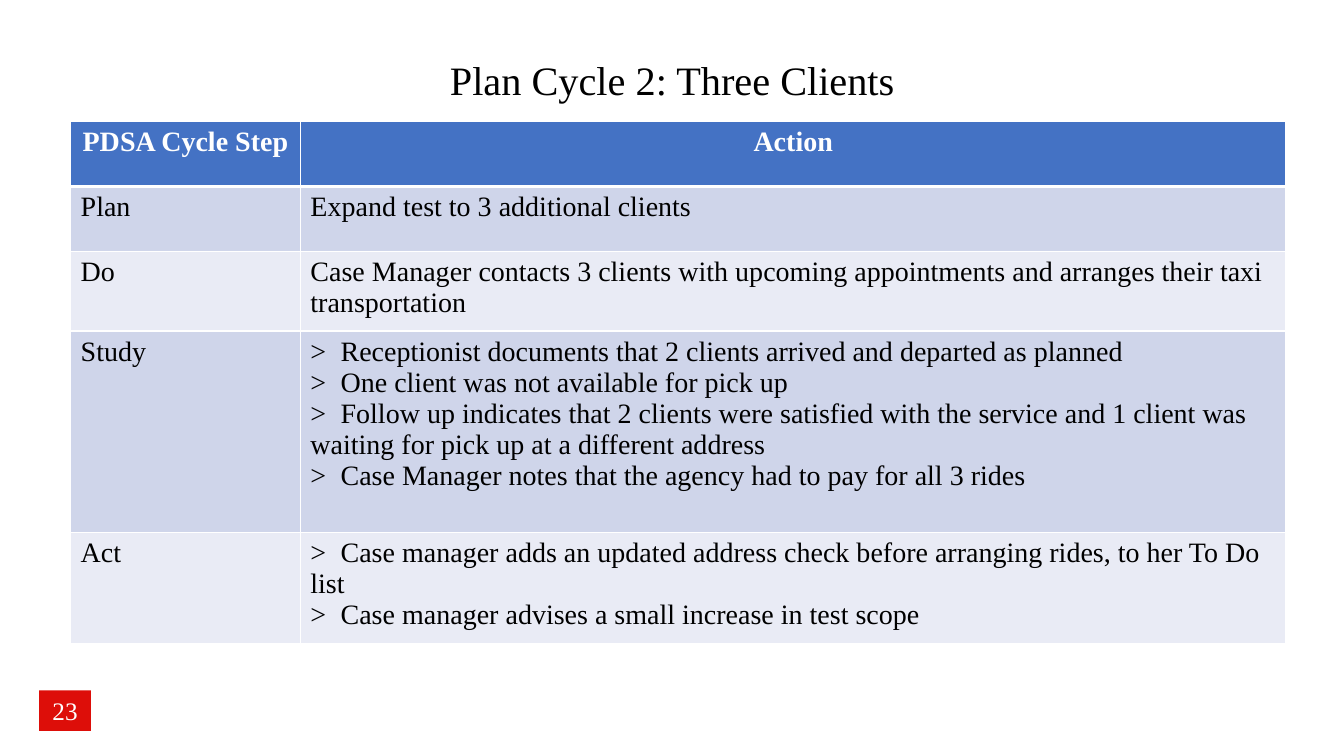
from dataclasses import dataclass

from lxml.etree import SubElement
from pptx import Presentation
from pptx.dml.color import RGBColor as Rgb
from pptx.enum.shapes import MSO_SHAPE as Shape
from pptx.enum.text import MSO_ANCHOR as Anchor, PP_ALIGN as Align
from pptx.oxml.ns import qn
from pptx.util import Cm, Pt


@dataclass(frozen=True)
class Theme:
    font: str = "Times New Roman"
    black: Rgb = Rgb(0x00, 0x00, 0x00)
    white: Rgb = Rgb(0xFF, 0xFF, 0xFF)
    header: Rgb = Rgb(0x44, 0x72, 0xC4)
    bands: tuple = (Rgb(0xCF, 0xD5, 0xEA), Rgb(0xE9, 0xEB, 0xF5))
    badge: Rgb = Rgb(0xDD, 0x0E, 0x09)
    title_size: float = 28.8
    table_size: float = 20
    badge_size: float = 18


THEME = Theme()
COLUMN_WIDTHS = (5.79, 24.84)
ROW_HEIGHTS = (1.63, 1.63, 2.01, 5.08, 2.26)
HEADINGS = ("PDSA Cycle Step", "Action")
# Several actions in one step are shown as a marked list
STEPS = (
    ("Plan", ["Expand test to 3 additional clients"]),
    ("Do", ["Case Manager contacts 3 clients with upcoming appointments "
            "and arranges their taxi transportation"]),
    ("Study", ["Receptionist documents that 2 clients arrived and departed as planned",
               "One client was not available for pick up",
               "Follow up indicates that 2 clients were satisfied with the service "
               "and 1 client was waiting for pick up at a different address",
               "Case Manager notes that the agency had to pay for all 3 rides"]),
    ("Act", ["Case manager adds an updated address check before arranging rides, "
             "to her To Do list",
             "Case manager advises a small increase in test scope"]),
)


def style(paragraph, size, color, align=Align.LEFT, bold=False):
    paragraph.alignment = align
    font = paragraph.font
    font.name, font.size, font.bold = THEME.font, Pt(size), bold
    font.color.rgb = color


def add_marker_tab(paragraph):
    tabs = SubElement(paragraph._p.get_or_add_pPr(), qn("a:tabLst"))
    SubElement(tabs, qn("a:tab"), pos=str(Cm(0.76)), algn="l")


def set_borders(cell, top=1, bottom=1):
    properties = cell._tc.get_or_add_tcPr()
    for side, width in (("L", 1), ("R", 1), ("T", top), ("B", bottom)):
        line = SubElement(properties, qn(f"a:ln{side}"), w=str(Pt(width)))
        fill = SubElement(line, qn("a:solidFill"))
        SubElement(fill, qn("a:srgbClr"), val=str(THEME.white))


def fill_cell(cell, lines, fill, color=THEME.black, align=Align.LEFT,
              bold=False, top=1, bottom=1):
    set_borders(cell, top, bottom)
    cell.fill.solid()
    cell.fill.fore_color.rgb = fill
    listed = len(lines) > 1
    cell.text = "\n".join(f">\t{line}" if listed else line for line in lines)
    for paragraph in cell.text_frame.paragraphs:
        if listed:
            add_marker_tab(paragraph)
        style(paragraph, THEME.table_size, color, align, bold)


def add_title(slide, text):
    frame = slide.shapes.add_textbox(Cm(2.34), Cm(1.4), Cm(29.21), Cm(1.35)).text_frame
    frame.word_wrap = True
    frame.vertical_anchor = Anchor.MIDDLE
    title = frame.paragraphs[0]
    title.text = text
    title.line_spacing = 0.9
    style(title, THEME.title_size, THEME.black, Align.CENTER)


def add_cycle_table(slide):
    table = slide.shapes.add_table(
        len(ROW_HEIGHTS), len(COLUMN_WIDTHS), Cm(1.78), Cm(3.07),
        Cm(sum(COLUMN_WIDTHS)), Cm(sum(ROW_HEIGHTS))).table
    for column, width in zip(table.columns, COLUMN_WIDTHS):
        column.width = Cm(width)
    for row, height in zip(table.rows, ROW_HEIGHTS):
        row.height = Cm(height)

    # Header row
    for column, heading in enumerate(HEADINGS):
        fill_cell(table.cell(0, column), [heading], THEME.header, THEME.white,
                  Align.CENTER, bold=True, bottom=3)

    # One banded row per step
    for row, (step, actions) in enumerate(STEPS, start=1):
        band = THEME.bands[(row - 1) % 2]
        top = 3 if row == 1 else 1
        fill_cell(table.cell(row, 0), [step], band, top=top)
        fill_cell(table.cell(row, 1), actions, band, top=top)


def add_page_badge(slide, number):
    badge = slide.shapes.add_shape(Shape.RECTANGLE, Cm(0.99), Cm(17.4), Cm(1.3), Cm(1.02))
    badge.shadow.inherit = False
    badge.fill.solid()
    badge.fill.fore_color.rgb = THEME.badge
    badge.line.fill.background()
    frame = badge.text_frame
    frame.word_wrap = False
    frame.vertical_anchor = Anchor.MIDDLE
    frame.text = number
    style(frame.paragraphs[0], THEME.badge_size, THEME.white, Align.CENTER)


def main():
    deck = Presentation()
    deck.slide_width, deck.slide_height = Cm(33.87), Cm(19.05)
    slide = deck.slides.add_slide(deck.slide_layouts[6])
    add_title(slide, "Plan Cycle 2: Three Clients")
    add_cycle_table(slide)
    add_page_badge(slide, "23")
    deck.save("out.pptx")


if __name__ == "__main__":
    main()
